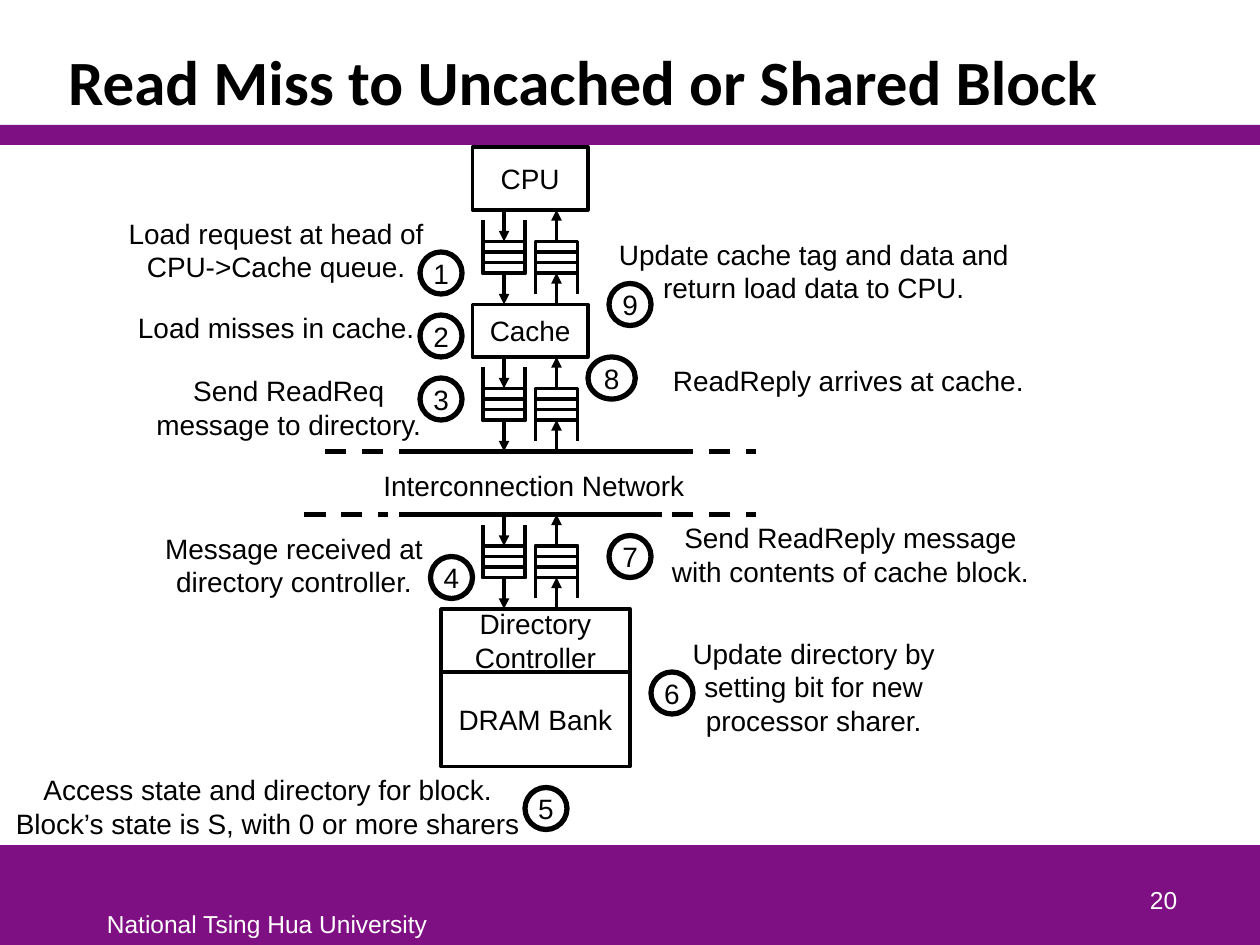
from dataclasses import dataclass

from lxml.etree import SubElement
from pptx import Presentation
from pptx.dml.color import RGBColor as Rgb
from pptx.enum.dml import MSO_LINE as Dash
from pptx.enum.shapes import MSO_CONNECTOR as Conn, MSO_SHAPE as Form
from pptx.enum.text import MSO_ANCHOR as Anchor, PP_ALIGN as Align
from pptx.oxml.ns import qn
from pptx.util import Emu, Pt


@dataclass(frozen=True)
class Theme:
    ink: Rgb = Rgb(0, 0, 0)
    paper: Rgb = Rgb(255, 255, 255)
    band: Rgb = Rgb(0x7F, 0x10, 0x84)
    head: str = "Calibri"
    body: str = "Arial"
    title: int = 36
    text: int = 16
    foot: int = 14
    thin: int = 2
    thick: int = 3


THEME = Theme()
SCALE = 914400 // 120

NOTES = [
    ("1", (400, 240, 40, 40), "Load request at head of CPU->Cache queue.", (100, 200, 326, 77)),
    ("2", (400, 300, 40, 40), "Load misses in cache.", (100, 290, 326, 44)),
    ("3", (400, 360, 40, 40), "Send ReadReq message to directory.", (130, 350, 290, 77)),
    ("4", (410, 530, 40, 40), "Message received at directory controller.", (120, 500, 320, 77)),
    ("5", (500, 750, 40, 40),
     "Access state and directory for block. Block’s state is S, with 0 or more sharers",
     (0, 730, 510, 77)),
    ("6", (620, 640, 40, 40), "Update directory by setting bit for new processor sharer.",
     (630, 600, 290, 109)),
    ("7", (580, 510, 40, 40), "Send ReadReply message with contents of cache block.",
     (620, 490, 380, 77)),
    ("8", (560, 340, 45, 40), "ReadReply arrives at cache.", (616, 340, 384, 44)),
    ("9", (580, 270, 40, 40), "Update cache tag and data and return load data to CPU.",
     (550, 220, 450, 77)),
]


def px(*nums):
    return [Emu(num * SCALE) for num in nums]


def write(shape, text, size=THEME.text, color=THEME.ink, font=THEME.body,
          align=Align.CENTER, anchor=Anchor.TOP, wrap=True):
    frame = shape.text_frame
    frame.word_wrap = wrap
    frame.vertical_anchor = anchor
    para = frame.paragraphs[0]
    para.text = text
    para.alignment = align
    para.font.size = Pt(size)
    para.font.name = font
    para.font.color.rgb = color
    return para


def label(slide, box, text, **style):
    return write(slide.shapes.add_textbox(*px(*box)), text, **style)


def shape(slide, box, form=Form.RECTANGLE, fill=None, line=None):
    item = slide.shapes.add_shape(form, *px(*box))
    item.shadow.inherit = False
    if fill is None:
        item.fill.background()
    else:
        item.fill.solid()
        item.fill.fore_color.rgb = fill
    if line is None:
        item.line.fill.background()
    else:
        stroke(item, line)
    return item


def stroke(item, width):
    item.line.color.rgb = THEME.ink
    item.line.width = Pt(width)


def wire(slide, start, end, width, arrow=False, dash=False):
    item = slide.shapes.add_connector(Conn.STRAIGHT, *px(*start, *end))
    stroke(item, width)
    if dash:
        item.line.dash_style = Dash.DASH
    props = item._element.spPr
    if arrow:
        SubElement(props.find(qn("a:ln")), qn("a:tailEnd"), type="triangle")
    SubElement(props, qn("a:effectLst"))


def block(slide, box, text):
    item = shape(slide, box, fill=THEME.paper, line=THEME.thin)
    write(item, text, anchor=Anchor.MIDDLE)


def queue(slide, box, down):
    left, top, wide, high = box
    mid, right, end = left + wide // 2, left + wide, top + high
    for row in range(3):
        slot = (left, top + 30 + 10 * row, wide, 10)
        shape(slide, slot, fill=THEME.paper, line=THEME.thin)
    lip, base = (top + 10, top + 60) if down else (end - 10, top + 30)
    pen = slide.shapes.build_freeform(*px(left, lip), scale=1.0)
    pen.add_line_segments([px(left, base), px(right, base), px(right, lip)], close=False)
    cup = pen.convert_to_shape()
    cup.shadow.inherit = False
    cup.fill.background()
    stroke(cup, THEME.thin)
    for pair in ((top, top + 30), (top + 60, end)):
        tail, tip = pair if down else pair[::-1]
        wire(slide, (mid, tail), (mid, tip), THEME.thin, arrow=True)


def lanes(slide, box):
    left, top, wide, high = box
    queue(slide, (left, top, 40, high), True)
    queue(slide, (left + wide - 40, top, 40, high), False)


def node(slide, box):
    left, top = box[:2]
    block(slide, (left + 30, top, 110, 60), "CPU")
    block(slide, (left + 30, top + 150, 110, 50), "Cache")
    block(slide, (left, top + 440, 180, 60), "Directory Controller")
    block(slide, (left, top + 500, 180, 90), "DRAM Bank")
    for drop in (60, 200, 350):
        lanes(slide, (left + 40, top + drop, 90, 90))


def network(slide, box):
    left, top, wide, high = box
    right = left + wide
    rails = [
        (top, 100, 350, (20, 100)),
        (top + high, 90, 340, (0, 80)),
    ]
    for y, start, end, lead in rails:
        wire(slide, (left + start, y), (left + end, y), THEME.thick)
        for first, last in ((left + lead[0], left + lead[1]), (right - 80, right)):
            wire(slide, (first, y), (last, y), THEME.thick, dash=True)
    label(slide, (left + 60, top + 10, 317, 44), "Interconnection Network", wrap=False)


def note(slide, num, spot, text, box):
    ring = shape(slide, spot, Form.OVAL, line=THEME.thick)
    write(ring, num, anchor=Anchor.MIDDLE, wrap=False)
    frame = ring.text_frame
    frame.margin_left = frame.margin_right = frame.margin_top = frame.margin_bottom = 0
    label(slide, box, text)


def header(slide, box):
    left, top, wide, high = box
    shape(slide, (left, top + high - 19, wide, 19), fill=THEME.band)
    para = label(slide, (left + 53, top + 30, 1076, 89),
                 "Read Miss to Uncached or Shared Block", size=THEME.title,
                 font=THEME.head, align=Align.LEFT, anchor=Anchor.BOTTOM)
    para.font.bold = True
    para.line_spacing = 0.85


def footer(slide, box):
    left, top = box[:2]
    shape(slide, box, fill=THEME.band)
    style = dict(size=THEME.foot, color=THEME.paper)
    label(slide, (left + 90, top + 55, 331, 40), "National Tsing Hua University",
          align=Align.LEFT, wrap=False, **style)
    label(slide, (left + 883, top + 12, 250, 60), "20",
          align=Align.RIGHT, anchor=Anchor.BOTTOM, **style)


def main():
    deck = Presentation()
    deck.slide_width, deck.slide_height = px(1200, 900)
    slide = deck.slides.add_slide(deck.slide_layouts[6])
    footer(slide, (0, 805, 1200, 95))
    header(slide, (0, 0, 1200, 138))
    node(slide, (420, 140, 180, 590))
    for item in NOTES:
        note(slide, *item)
    network(slide, (290, 430, 430, 60))
    deck.save("out.pptx")


if __name__ == "__main__":
    main()
